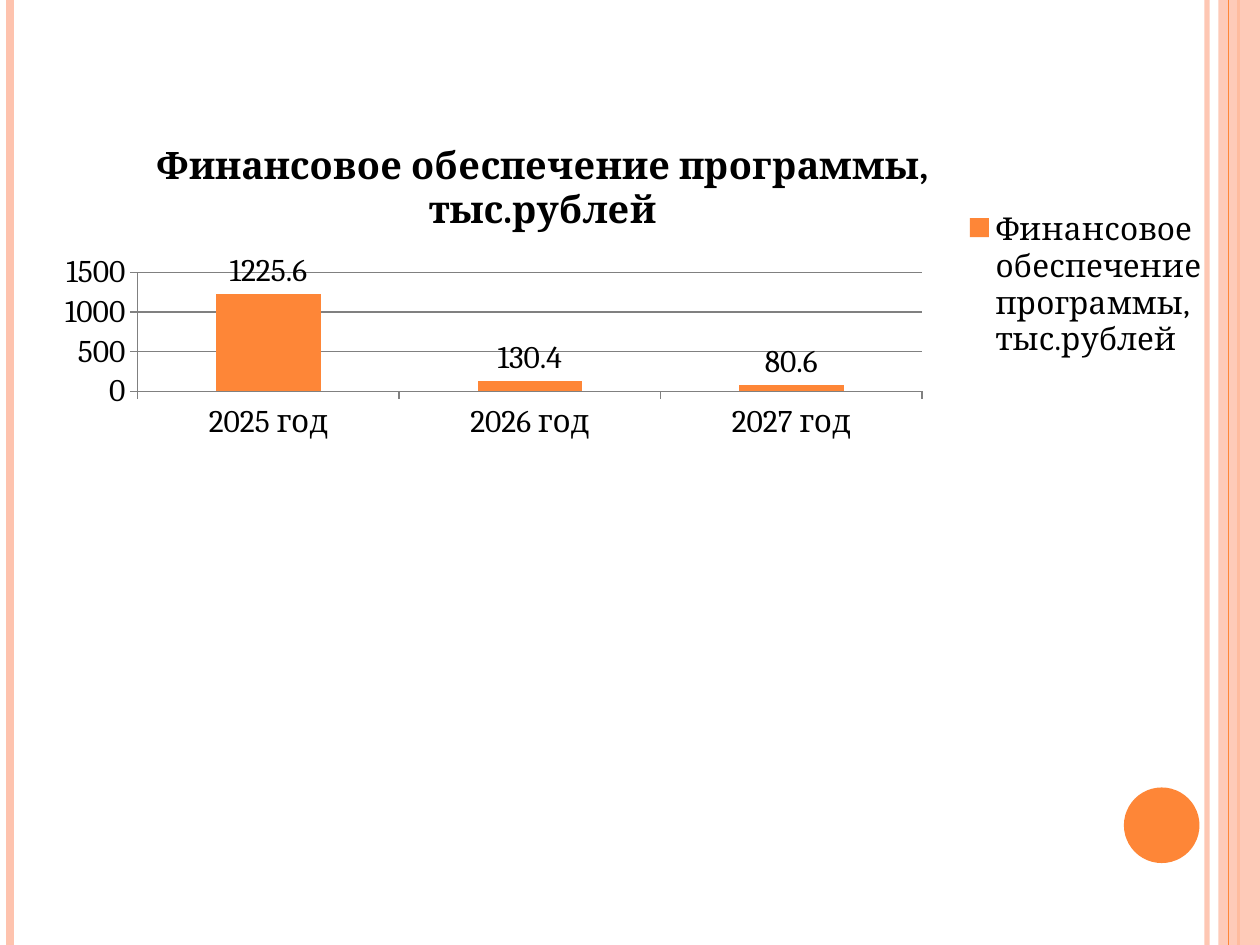
from lxml.etree import SubElement as Sub
from pptx import Presentation
from pptx.chart.data import CategoryChartData as Data
from pptx.dml.color import RGBColor
from pptx.enum.chart import XL_CHART_TYPE as Kind, XL_LABEL_POSITION as Spot
from pptx.enum.chart import XL_LEGEND_POSITION as Side, XL_TICK_MARK as Tick
from pptx.enum.shapes import MSO_CONNECTOR as Link, MSO_SHAPE as Form
from pptx.oxml import parse_xml
from pptx.oxml.ns import nsdecls, qn
from pptx.util import Inches, Pt

ORANGE = RGBColor(0xFE, 0x86, 0x37)
PEACH = RGBColor(0xFE, 0xC3, 0xAE)
BLACK = RGBColor(0, 0, 0)
GREY = RGBColor(0x80, 0x80, 0x80)
FONT = "Cambria"
NAME = "Финансовое обеспечение программы, тыс.рублей"
COSTS = {"2025 год": 1225.6, "2026 год": 130.4, "2027 год": 80.6}
STRIPES = [(9.58, PEACH, 3, 93), (0.08, PEACH, 4.5, 100), (9.83, ORANGE, 1.5, 100)]


def fade(shape, share):
    """Set the opacity of a shape's colour in percent."""
    tint = next(shape._element.spPr.iter(qn("a:srgbClr")))
    Sub(tint, qn("a:alpha"), val=str(share * 1000))


def add_stripe(slide, x, color, width, share=100):
    """Draw a vertical line over the full slide height."""
    line = slide.shapes.add_connector(Link.STRAIGHT, Inches(x), 0, Inches(x), Inches(7.5))
    line.line.color.rgb = color
    line.line.width = Pt(width)
    Sub(line._element.spPr, qn("a:effectLst"))
    if share < 100:
        fade(line, share)


def add_form(slide, form, box, color):
    """Draw a plain filled shape and return it."""
    shape = slide.shapes.add_shape(form, *map(Inches, box))
    shape.shadow.inherit = False
    shape.fill.solid()
    shape.fill.fore_color.rgb = color
    shape.line.fill.background()
    return shape


def set_font(font, size, bold=False):
    """Apply the chart typeface."""
    font.name, font.size, font.bold = FONT, Pt(size), bold
    font.color.rgb = BLACK


def place(part, after, inner=False, **spans):
    """Put a chart part at fractions of the chart area."""
    for old in part.findall(qn("c:layout")):
        part.remove(old)
    layout = parse_xml(f"<c:layout {nsdecls('c')}><c:manualLayout/></c:layout>")
    if inner:
        Sub(layout[0], qn("c:layoutTarget"), val="inner")
    for key in "xy":
        Sub(layout[0], qn(f"c:{key}Mode"), val="edge")
    for key, span in spans.items():
        Sub(layout[0], qn(f"c:{key}"), val=str(span))
    if after:
        part.find(qn(after)).addnext(layout)
    else:
        part.insert(0, layout)


def style_axes(chart):
    """Format both axes and the grid."""
    for axis in (chart.category_axis, chart.value_axis):
        axis.major_tick_mark = Tick.OUTSIDE
        axis.minor_tick_mark = Tick.NONE
        axis.format.line.color.rgb = GREY
        set_font(axis.tick_labels.font, 18)
    scale = chart.value_axis
    scale.minimum_scale, scale.maximum_scale, scale.major_unit = 0, 1500, 500
    scale.has_major_gridlines = True
    scale.major_gridlines.format.line.color.rgb = GREY


def style_bars(plot):
    """Colour the columns and show their values."""
    plot.vary_by_categories = False
    plot.gap_width = 150
    bars = plot.series[0]
    bars.format.fill.solid()
    bars.format.fill.fore_color.rgb = ORANGE
    labels = bars.data_labels
    labels.show_value = True
    labels.position = Spot.OUTSIDE_END
    set_font(labels.font, 18)


def add_costs(slide):
    """Add the column chart of yearly funding."""
    data = Data(number_format="General")
    data.categories = list(COSTS)
    data.add_series(NAME, list(COSTS.values()))
    box = map(Inches, (0.35, 0.99, 9.29, 2.55))
    chart = slide.shapes.add_chart(Kind.COLUMN_CLUSTERED, *box, data).chart
    set_font(chart.font, 18)
    style_axes(chart)
    style_bars(chart.plots[0])
    chart.has_title = True
    title = chart.chart_title
    title.text_frame.text = NAME
    set_font(title.text_frame.paragraphs[0].runs[0].font, 21.6, True)
    title.include_in_layout = False
    chart.has_legend = True
    legend = chart.legend
    legend.position = Side.RIGHT
    legend.include_in_layout = False
    set_font(legend.font, 18)
    area = chart._chartSpace.chart
    place(area.plotArea, None, True, x=0.08, y=0.46, w=0.67, h=0.37)
    place(title._element, "c:tx", x=0.09, y=0.03)
    place(legend._element, "c:legendPos", x=0.78, y=0.27, w=0.22, h=0.46)


def main():
    """Build and save the slide."""
    deck = Presentation()
    deck.slide_width, deck.slide_height = Inches(10), Inches(7.5)
    slide = deck.slides.add_slide(deck.slide_layouts[6])
    for stripe in STRIPES:
        add_stripe(slide, *stripe)
    fade(add_form(slide, Form.RECTANGLE, (9.67, 0, 0.33, 7.5), PEACH), 87)
    add_stripe(slide, 9.75, ORANGE, 0.75)
    add_form(slide, Form.OVAL, (8.92, 6.25, 0.6, 0.6), ORANGE)
    add_costs(slide)
    deck.save("out.pptx")


if __name__ == "__main__":
    main()
